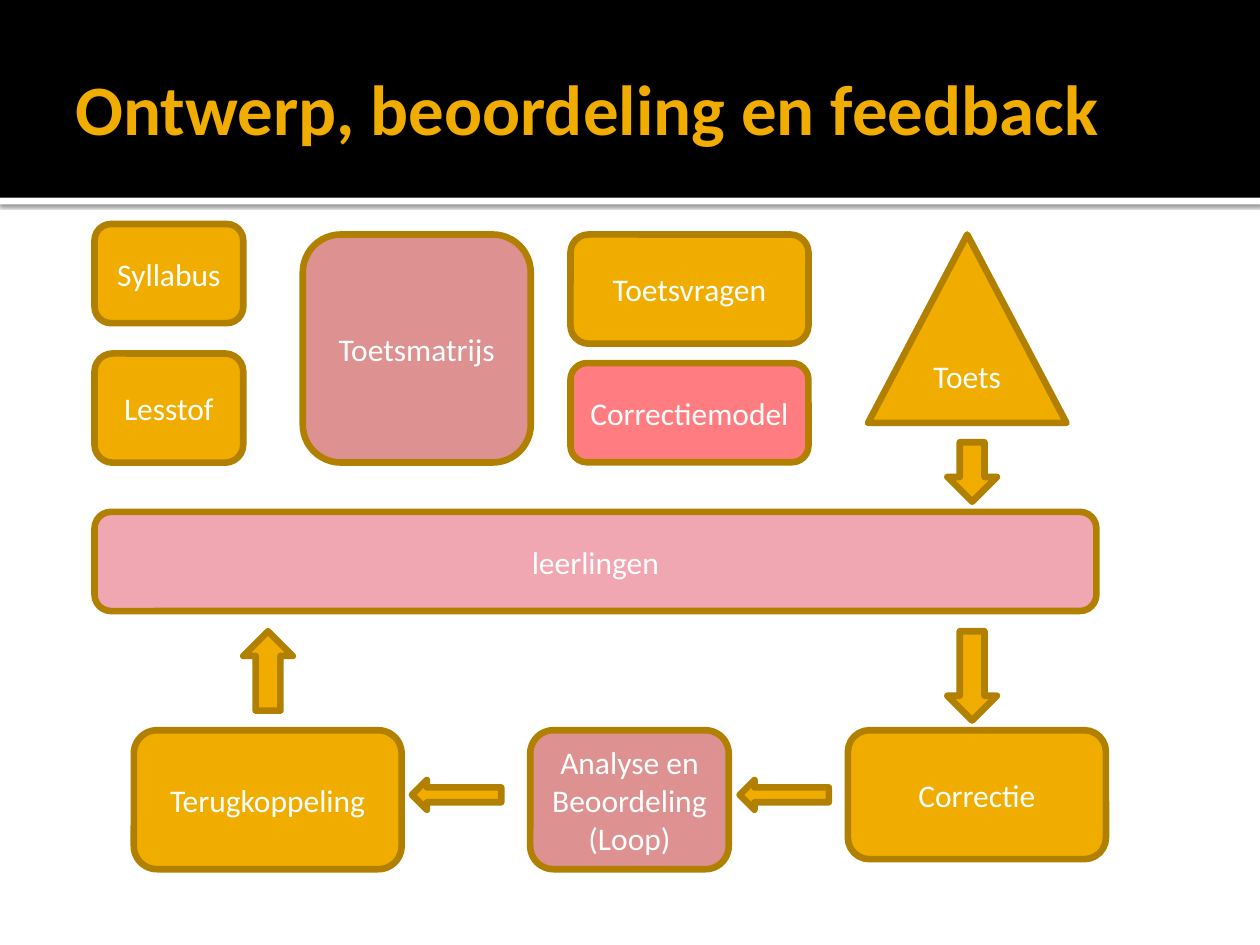
from dataclasses import dataclass

from lxml import etree
from pptx import Presentation
from pptx.dml.color import RGBColor as RGB
from pptx.enum.shapes import MSO_SHAPE as SHAPE
from pptx.enum.text import MSO_ANCHOR as ANCHOR, PP_ALIGN as ALIGN
from pptx.oxml.ns import nsdecls
from pptx.util import Pt


@dataclass(frozen=True)
class Theme:
    font: str = "Calibri"
    title_size: float = 40.5
    label_size: float = 18
    border: float = 3.78
    black: str = "000000"
    white: str = "FFFFFF"
    gold: str = "F0AD00"
    dark_gold: str = "B28000"
    rose: str = "DD9191"
    red: str = "FF7C80"
    pink: str = "F0A7B1"


T = Theme()


def add_shape(kind, box, fill, line=None):
    sp = s.shapes.add_shape(kind, *[Pt(v) for v in box])
    sp.shadow.inherit = False
    sp.fill.solid()
    sp.fill.fore_color.rgb = RGB.from_string(fill)
    if line:
        sp.line.color.rgb = RGB.from_string(line)
        sp.line.width = Pt(T.border)
    else:
        sp.line.fill.background()
    return sp


def write(sp, text, size, color, align, bold=False):
    tf = sp.text_frame
    tf.word_wrap = True
    tf.vertical_anchor = ANCHOR.MIDDLE
    tf.text = text
    for p in tf.paragraphs:
        p.alignment = align
        for r in p.runs:
            r.font.name = T.font
            r.font.size = Pt(size)
            r.font.bold = bold
            r.font.color.rgb = RGB.from_string(color)
    return tf


prs = Presentation()
prs.slide_width, prs.slide_height = Pt(720), Pt(540)
s = prs.slides.add_slide(prs.slide_layouts[6])

# Header: white strip with a soft shadow, black band, title
strip = add_shape(SHAPE.RECTANGLE, (0, 113, 720, 3.8), T.white)
effects = strip._element.spPr.find("{*}effectLst")
effects.append(etree.fromstring(
    f'<a:outerShdw {nsdecls("a")} blurRad="{Pt(2.5)}" dist="{Pt(0.8)}" dir="5400000" rotWithShape="0">'
    f'<a:srgbClr val="{T.black}"><a:alpha val="60000"/></a:srgbClr></a:outerShdw>'))
add_shape(SHAPE.RECTANGLE, (0, 0, 720, 113), T.black)
title = s.shapes.add_textbox(Pt(36), Pt(12.2), Pt(648), Pt(98.6))
tf = write(title, "Ontwerp, beoordeling en feedback", T.title_size, T.gold, ALIGN.LEFT, bold=True)
tf.margin_right = Pt(3.6)

# Steps of the test cycle
ROUND, TRIANGLE = SHAPE.ROUNDED_RECTANGLE, SHAPE.ISOSCELES_TRIANGLE
steps = [
    ("Syllabus", ROUND, (54, 128, 85, 56.7), T.gold),
    ("Lesstof", ROUND, (54, 202, 85, 62.4), T.gold),
    ("Toetsmatrijs", ROUND, (173, 134, 130.3, 130.3), T.rose),
    ("Toetsvragen", ROUND, (326, 134, 136, 62.4), T.gold),
    ("Correctiemodel", ROUND, (326, 207.5, 136, 56.7), T.red),
    ("Toets", TRIANGLE, (496, 134, 113.4, 107.7), T.gold),
    ("leerlingen", ROUND, (54, 292.5, 572.5, 56.7), T.pink),
    ("Correctie", ROUND, (484.5, 417.3, 147.5, 73.7), T.gold),
    ("Analyse en\nBeoordeling\n(Loop)", ROUND, (303, 417.3, 113.4, 79.4), T.rose),
    ("Terugkoppeling", ROUND, (76.5, 417.3, 153, 79.4), T.gold),
]
for text, kind, box, fill in steps:
    sp = add_shape(kind, box, fill, T.dark_gold)
    write(sp, text, T.label_size, T.white, ALIGN.CENTER)

# Arrows between the steps
arrows = [
    (SHAPE.DOWN_ARROW, (541.4, 252.7, 28.3, 34), 0),
    (SHAPE.DOWN_ARROW, (541.4, 360.7, 28.3, 51), 0),
    (SHAPE.RIGHT_ARROW, (422.6, 445.7, 51, 17), 180),
    (SHAPE.RIGHT_ARROW, (235.4, 445.7, 51, 17), 180),
    (SHAPE.DOWN_ARROW, (139, 360.7, 28.3, 45.4), 180),
]
for kind, box, turn in arrows:
    add_shape(kind, box, T.gold, T.dark_gold).rotation = turn

prs.save("out.pptx")
